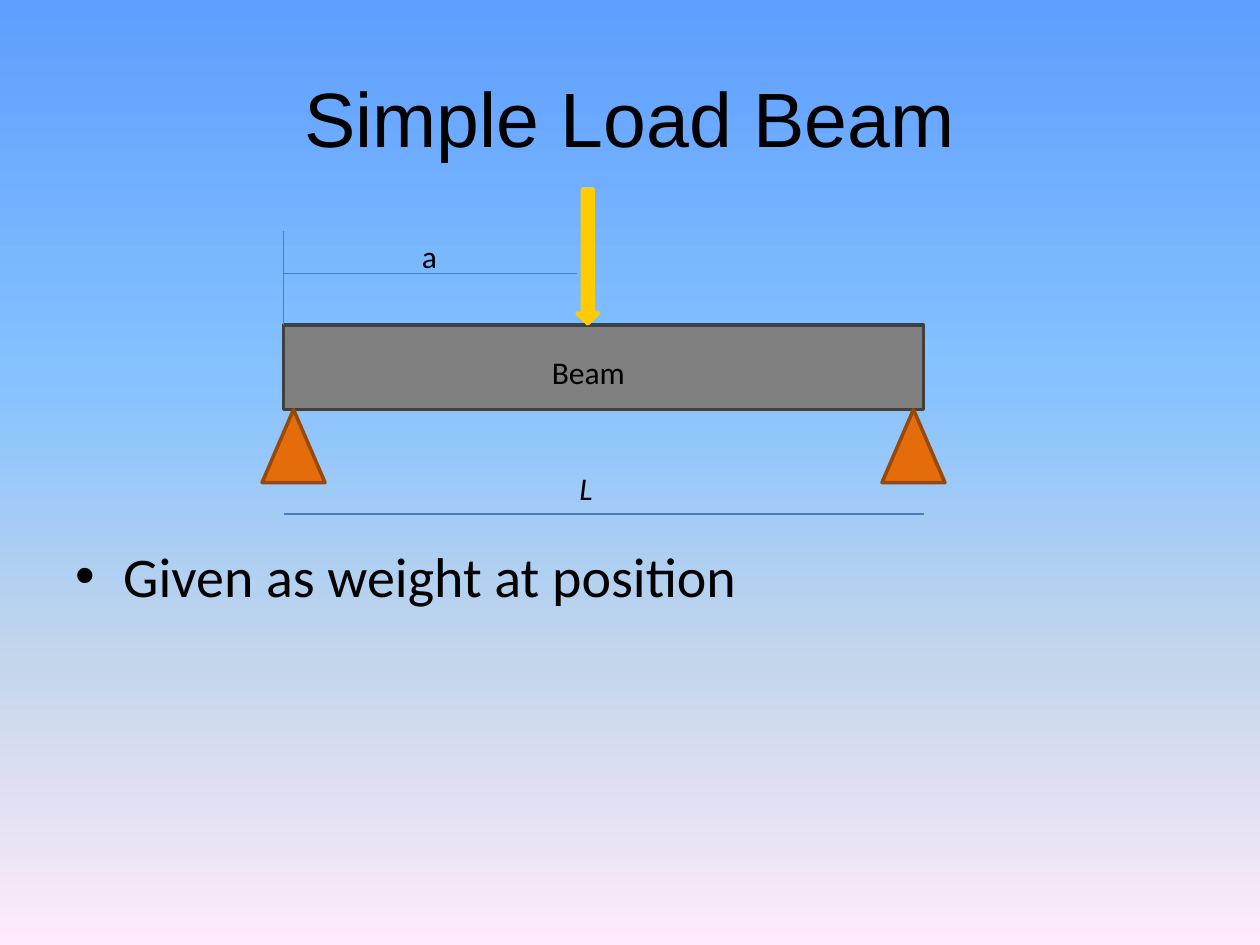
from copy import deepcopy
from dataclasses import dataclass

from lxml.etree import SubElement
from pptx import Presentation
from pptx.dml.color import RGBColor
from pptx.enum.shapes import MSO_CONNECTOR as Connector, MSO_SHAPE as Shape
from pptx.enum.text import MSO_ANCHOR as Anchor, PP_ALIGN as Align
from pptx.oxml.ns import qn
from pptx.util import Inches, Pt


@dataclass(frozen=True)
class Theme:
    sky: tuple = ((0, "5E9EFF"), (0.4, "85C2FF"), (0.7, "C4D6EB"), (1, "FFEBFA"))
    text: str = "000000"
    beam: str = "808080"
    beam_edge: str = "404040"
    support: str = "E46C0A"
    support_edge: str = "984807"
    dimension: str = "4B7EBC"
    load: str = "FFCC00"
    title_font: str = "Arial"
    body_font: str = "Calibri"
    title_size: int = 44
    body_size: int = 32
    label_size: int = 18
    edge_width: float = 2
    dimension_width: float = 0.75


THEME = Theme()


def color(code):
    return RGBColor.from_string(code)


def add_span(para, text, font, size, italic=None):
    span = para.add_run()
    span.text = text
    span.font.name = font
    span.font.size = Pt(size)
    span.font.italic = italic
    span.font.color.rgb = color(THEME.text)


def add_part(page, kind, box, fill, edge):
    part = page.shapes.add_shape(kind, *map(Inches, box))
    part.shadow.inherit = False
    part.fill.solid()
    part.fill.fore_color.rgb = color(fill)
    part.line.color.rgb = color(edge)
    part.line.width = Pt(THEME.edge_width)
    return part


def add_dimension(page, start, end):
    line = page.shapes.add_connector(Connector.STRAIGHT, *map(Inches, start + end))
    line.line.color.rgb = color(THEME.dimension)
    line.line.width = Pt(THEME.dimension_width)
    SubElement(line._element.spPr, qn("a:effectLst"))


def add_label(page, box, text, italic=None, inset=0.1):
    label = page.shapes.add_textbox(*map(Inches, box))
    frame = label.text_frame
    frame.word_wrap = True
    frame.margin_left = Inches(inset)
    add_span(frame.paragraphs[0], text, THEME.body_font, THEME.label_size, italic)


def paint_background(page):
    fill = page.background.fill
    fill.gradient()
    fill.gradient_angle = 270
    stop_list = next(page.element.iter(qn("a:gsLst")))
    for _ in range(len(THEME.sky) - len(stop_list)):
        stop_list.append(deepcopy(stop_list[0]))
    for stop, (position, code) in zip(fill.gradient_stops, THEME.sky):
        stop.position = position
        stop.color.rgb = color(code)


def place_title(page, box, text):
    title = page.shapes.title
    title.left, title.top, title.width, title.height = map(Inches, box)
    title.text_frame.vertical_anchor = Anchor.MIDDLE
    para = title.text_frame.paragraphs[0]
    para.alignment = Align.CENTER
    add_span(para, text, THEME.title_font, THEME.title_size)


def place_beam_diagram(page, box):
    """Draw supports, load and dimensions around the beam's box."""
    left, top, width, height = box
    right, bottom = left + width, top + height
    load_left, load_width = left + 2.33, 0.17

    # Beam on its two supports
    add_part(page, Shape.RECTANGLE, box, THEME.beam, THEME.beam_edge)
    for support_left in (left - 0.17, right - 0.33):
        add_part(page, Shape.ISOSCELES_TRIANGLE, (support_left, bottom, 0.5, 0.58),
                 THEME.support, THEME.support_edge)
    add_label(page, (left + 1.75, top + 0.17, 1.58, 0.4), "Beam", inset=0.38)

    # Distance to the load
    add_dimension(page, (left, top), (left, top - 0.75))
    add_dimension(page, (left, top - 0.41), (load_left, top - 0.41))
    add_label(page, (left + 1, top - 0.75, 0.33, 0.4), "a")

    # Span between the supports
    add_dimension(page, (left, bottom + 0.83), (right, bottom + 0.83))
    add_label(page, (left + 2.25, bottom + 0.42, 0.5, 0.4), "L", italic=True)

    # Load
    add_part(page, Shape.DOWN_ARROW, (load_left, top - 1.08, load_width, 1.07),
             THEME.load, THEME.load)


def place_bullets(page, box, items):
    frame = page.shapes.add_textbox(*map(Inches, box)).text_frame
    frame.word_wrap = True
    for index, item in enumerate(items):
        para = frame.add_paragraph() if index else frame.paragraphs[0]
        para.space_before = Pt(THEME.body_size * 0.2)
        props = para._p.get_or_add_pPr()
        props.set("marL", str(Inches(0.38)))
        props.set("indent", str(Inches(-0.38)))
        SubElement(props, qn("a:buFont")).set("typeface", "Arial")
        SubElement(props, qn("a:buChar")).set("char", "•")
        add_span(para, item, THEME.body_font, THEME.body_size)


def main():
    deck = Presentation()
    deck.slide_width, deck.slide_height = Inches(10), Inches(7.5)
    page = deck.slides.add_slide(deck.slide_layouts[5])
    paint_background(page)
    place_title(page, (0.5, 0.3, 9, 1.25), "Simple Load Beam")
    place_bullets(page, (0.5, 4.25, 9, 2.45), ["Given as weight at position"])
    place_beam_diagram(page, (2.25, 2.58, 5.08, 0.67))
    deck.save("out.pptx")


if __name__ == "__main__":
    main()
